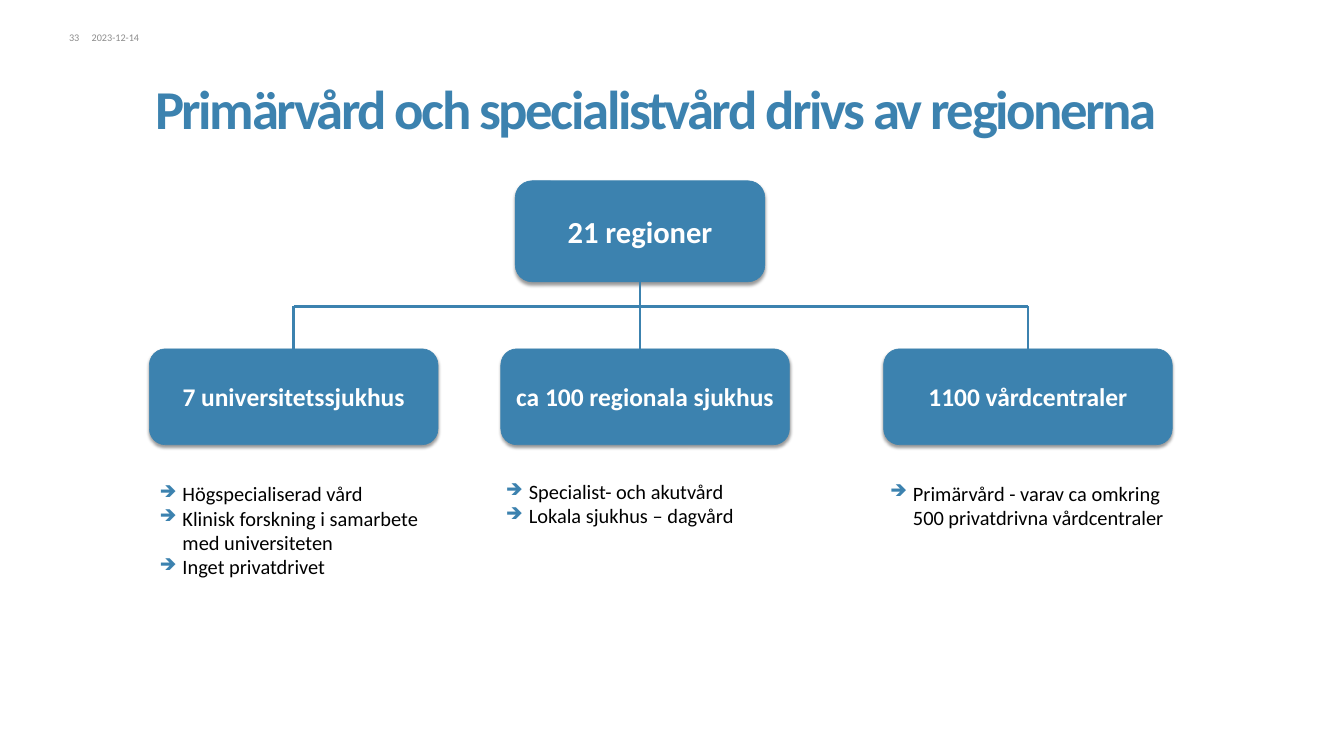
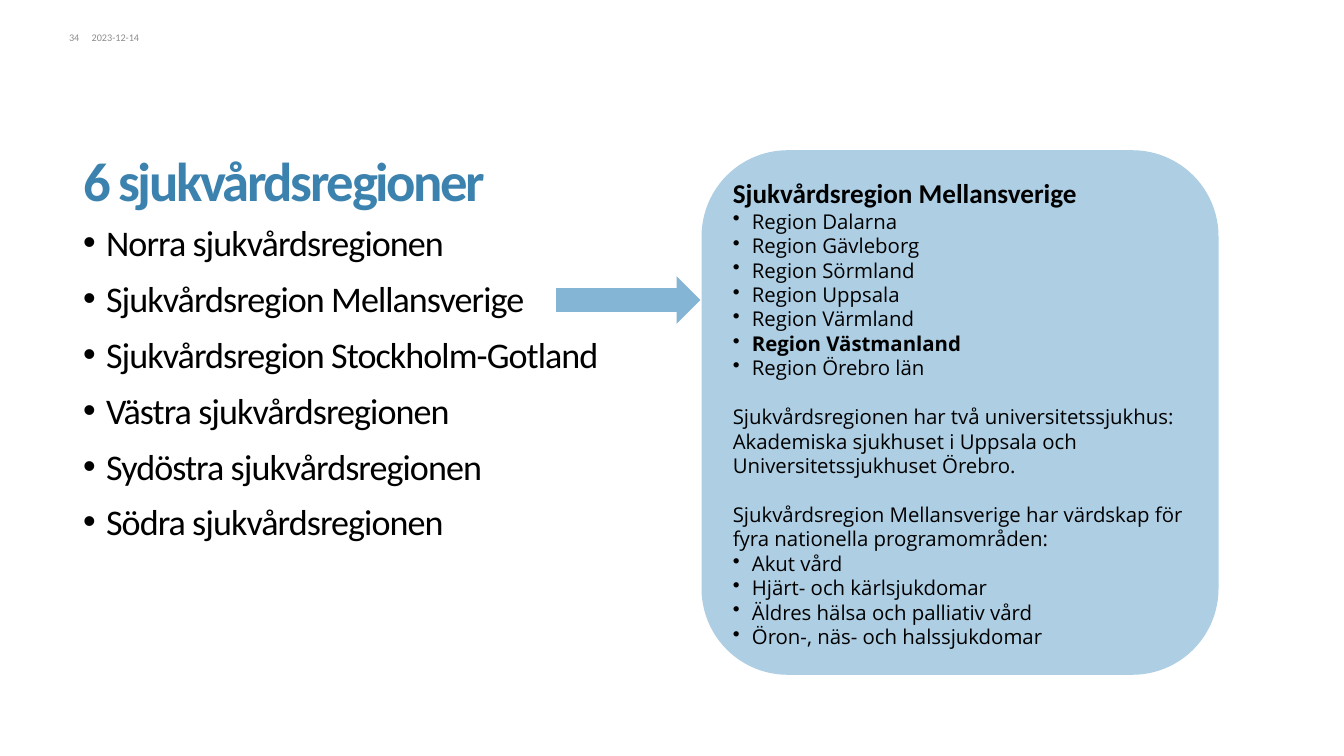
from dataclasses import dataclass
from typing import Any, Optional

import pptx
import pptx.dml.color
import pptx.enum.shapes
import pptx.enum.text
import pptx.oxml
import pptx.oxml.ns
import pptx.util

Pt = pptx.util.Pt
RGBColor = pptx.dml.color.RGBColor
Align = pptx.enum.text.PP_ALIGN
Anchor = pptx.enum.text.MSO_ANCHOR
Preset = pptx.enum.shapes.MSO_SHAPE

BLUE = RGBColor(0x3C, 0x82, 0xAF)
MID_BLUE = RGBColor(0x84, 0xB5, 0xD5)
PALE_BLUE = RGBColor(0xAD, 0xCE, 0xE3)
GREY = RGBColor(0x8C, 0x8C, 0x8C)
BLACK = RGBColor(0, 0, 0)
WHITE = RGBColor(0xFF, 0xFF, 0xFF)

MAIN_FONT = "Calibri"
PANEL_FONT = "Open Sans"
DATE = "2023-12-14"
TITLE_ONLY, TITLE_AND_BODY = 5, 1
TOP, BOTTOM = 0, 2
PANEL_LINE = 28.8


@dataclass(frozen=True)
class Box:
    left: float
    top: float
    width: float
    height: float

    def lengths(self) -> tuple:
        return Pt(self.left), Pt(self.top), Pt(self.width), Pt(self.height)


@dataclass(frozen=True)
class TextStyle:
    size: float
    color: RGBColor = BLACK
    bold: bool = False
    font: str = MAIN_FONT
    align: Align = Align.LEFT
    bullet: str = ""
    indent: float = 0
    bullet_color: Optional[RGBColor] = None
    bullet_percent: int = 100
    tracking: float = 0
    line_spacing: Any = None
    space_before: float = 0
    space_after: float = 0


@dataclass(frozen=True)
class CareUnit:
    name: str
    left: float
    list_box: Box
    facts: tuple


TITLE = TextStyle(64.5, BLUE, True, tracking=-2.8, line_spacing=0.85)
CENTRED_TITLE = TextStyle(64.5, BLUE, True, align=Align.CENTER, tracking=-2.8, line_spacing=0.85)
DATE_STYLE = TextStyle(12, GREY)
NUMBER_STYLE = TextStyle(12, GREY, align=Align.RIGHT)
ROOT_STYLE = TextStyle(36, WHITE, True, align=Align.CENTER)
UNIT_STYLE = TextStyle(30, WHITE, True, align=Align.CENTER)
FACT = TextStyle(24, bullet="➔", indent=27, bullet_color=BLUE, bullet_percent=80)
REGION = TextStyle(42.5, bullet="•", indent=27, tracking=-1.1, line_spacing=0.84, space_after=23)
PANEL_HEADING = TextStyle(32, bold=True)
PANEL_TEXT = TextStyle(24, font=PANEL_FONT, line_spacing=Pt(PANEL_LINE))
PANEL_BLOCK = TextStyle(24, font=PANEL_FONT, line_spacing=Pt(PANEL_LINE), space_before=PANEL_LINE)
PANEL_ITEM = TextStyle(24, font=PANEL_FONT, bullet="•", indent=22.5, line_spacing=Pt(PANEL_LINE))
PANEL_BOLD_ITEM = TextStyle(24, bold=True, font=PANEL_FONT, bullet="•", indent=22.5,
                            line_spacing=Pt(PANEL_LINE))

ROOT_BOX = Box(607, 213, 294, 119)
UNIT_TOP, UNIT_WIDTH, UNIT_HEIGHT = 411, 340, 113
BRANCH_TOP = 361
CARE_UNITS = (
    CareUnit("7 universitetssjukhus", 176, Box(188, 567, 318, 122),
             ("Högspecialiserad vård", "Klinisk forskning i samarbete med universiteten",
              "Inget privatdrivet")),
    CareUnit("ca 100 regionala sjukhus", 590, Box(596, 564.5, 343, 58),
             ("Specialist- och akutvård", "Lokala sjukhus – dagvård")),
    CareUnit("1100 vårdcentraler", 1041, Box(1048.5, 566.5, 343, 58),
             ("Primärvård - varav ca omkring 500 privatdrivna vårdcentraler",)),
)
CARE_REGIONS = (
    "Norra sjukvårdsregionen", "Sjukvårdsregion Mellansverige",
    "Sjukvårdsregion Stockholm-Gotland", "Västra sjukvårdsregionen",
    "Sydöstra sjukvårdsregionen", "Södra sjukvårdsregionen",
)
PANEL_LINES = (
    ("Sjukvårdsregion Mellansverige", PANEL_HEADING),
    ("Region Dalarna", PANEL_ITEM),
    ("Region Gävleborg", PANEL_ITEM),
    ("Region Sörmland", PANEL_ITEM),
    ("Region Uppsala", PANEL_ITEM),
    ("Region Värmland", PANEL_ITEM),
    ("Region Västmanland", PANEL_BOLD_ITEM),
    ("Region Örebro län", PANEL_ITEM),
    ("Sjukvårdsregionen har två universitetssjukhus:", PANEL_BLOCK),
    ("Akademiska sjukhuset i Uppsala och Universitetssjukhuset Örebro.", PANEL_TEXT),
    ("Sjukvårdsregion Mellansverige har värdskap för fyra nationella programområden:",
     PANEL_BLOCK),
    ("Akut vård", PANEL_ITEM),
    ("Hjärt- och kärlsjukdomar", PANEL_ITEM),
    ("Äldres hälsa och palliativ vård", PANEL_ITEM),
    ("Öron-, näs- och halssjukdomar", PANEL_ITEM),
)


def add_xml(parent: Any, tag: str, **attributes: Any) -> Any:
    element = pptx.oxml.parse_xml(f"<a:{tag} {pptx.oxml.ns.nsdecls('a')}/>")
    for name, value in attributes.items():
        element.set(name, str(value))
    parent.append(element)
    return element


def add_bullet(paragraph: Any, style: TextStyle) -> None:
    properties = paragraph._p.get_or_add_pPr()
    indent = Pt(style.indent)
    properties.set("marL", str(indent))
    properties.set("indent", str(-indent))
    if style.bullet_color is not None:
        add_xml(add_xml(properties, "buClr"), "srgbClr", val=style.bullet_color)
    add_xml(properties, "buSzPct", val=style.bullet_percent * 1000)
    add_xml(properties, "buChar", char=style.bullet)


def write_paragraph(paragraph: Any, text: str, style: TextStyle) -> None:
    if style.bullet:
        add_bullet(paragraph, style)
    run = paragraph.add_run()
    run.text = text
    if style.tracking:
        run._r.get_or_add_rPr().set("spc", str(round(style.tracking * 100)))
    paragraph.alignment = style.align
    paragraph.line_spacing = style.line_spacing
    paragraph.space_before = Pt(style.space_before)
    paragraph.space_after = Pt(style.space_after)
    font = paragraph.font
    font.name, font.size, font.bold = style.font, Pt(style.size), style.bold
    font.color.rgb = style.color


def write_lines(frame: Any, lines: Any) -> None:
    """Fill a frame with (text, style) pairs, one paragraph each."""
    frame.word_wrap = True
    frame.auto_size = pptx.enum.text.MSO_AUTO_SIZE.NONE
    for index, (text, style) in enumerate(lines):
        paragraph = frame.add_paragraph() if index else frame.paragraphs[0]
        write_paragraph(paragraph, text, style)


def set_margins(frame: Any, bottom: float = 0) -> None:
    frame.margin_left = frame.margin_top = frame.margin_right = Pt(0)
    frame.margin_bottom = Pt(bottom)


def place(shape: Any, box: Box) -> None:
    shape.left, shape.top, shape.width, shape.height = box.lengths()


def add_text(slide: Any, box: Box, lines: Any) -> None:
    frame = slide.shapes.add_textbox(*box.lengths()).text_frame
    set_margins(frame)
    write_lines(frame, lines)


def add_filled_shape(slide: Any, preset: Preset, box: Box, color: RGBColor) -> Any:
    shape = slide.shapes.add_shape(preset, *box.lengths())
    shape.shadow.inherit = False
    shape.fill.solid()
    shape.fill.fore_color.rgb = color
    shape.line.fill.background()
    shape.text_frame.vertical_anchor = Anchor.MIDDLE
    return shape


def add_unit_box(slide: Any, box: Box, text: str, style: TextStyle) -> Any:
    """Add a rounded box with white text and a soft shadow below it."""
    shape = add_filled_shape(slide, Preset.ROUNDED_RECTANGLE, box, BLUE)
    shape.line.color.rgb = BLUE
    shape.line.width = Pt(0.75)
    effects = shape._element.spPr.find(pptx.oxml.ns.qn("a:effectLst"))
    shadow = add_xml(effects, "outerShdw", blurRad=Pt(4), dist=Pt(3), dir=90 * 60000,
                     rotWithShape=0)
    add_xml(add_xml(shadow, "srgbClr", val=BLACK), "alpha", val=40000)
    write_lines(shape.text_frame, [(text, style)])
    return shape


def add_line(slide: Any, start: tuple, end: tuple) -> Any:
    connector = slide.shapes.add_connector(
        pptx.enum.shapes.MSO_CONNECTOR.STRAIGHT, *map(Pt, start + end))
    connector.line.color.rgb = BLUE
    connector.line.width = Pt(3)
    add_xml(connector._element.spPr, "effectLst")
    return connector


def add_slide(presentation: Any, layout: int, number: int, title: str, title_box: Box,
              style: TextStyle) -> Any:
    """Add a slide with its title, page number and date."""
    slide = presentation.slides.add_slide(presentation.slide_layouts[layout])
    place(slide.shapes.title, title_box)
    frame = slide.shapes.title.text_frame
    frame.vertical_anchor = Anchor.BOTTOM
    set_margins(frame, bottom=6)
    write_lines(frame, [(title, style)])
    add_text(slide, Box(65.5, 37.5, 28, 14.5), [(str(number), NUMBER_STYLE)])
    add_text(slide, Box(108, 37.5, 63, 14.5), [(DATE, DATE_STYLE)])
    return slide


def build_care_slide(presentation: Any) -> None:
    slide = add_slide(presentation, TITLE_ONLY, 33,
                      "Primärvård och specialistvård drivs av regionerna",
                      Box(79, 78.5, 1387.5, 93.5), CENTRED_TITLE)
    root = add_unit_box(slide, ROOT_BOX, "21 regioner", ROOT_STYLE)
    unit_shapes = []
    for unit in CARE_UNITS:
        box = Box(unit.left, UNIT_TOP, UNIT_WIDTH, UNIT_HEIGHT)
        unit_shapes.append(add_unit_box(slide, box, unit.name, UNIT_STYLE))
        add_text(slide, unit.list_box, [(fact, FACT) for fact in unit.facts])

    trunk_x = ROOT_BOX.left + ROOT_BOX.width / 2
    trunk = add_line(slide, (trunk_x, ROOT_BOX.top + ROOT_BOX.height), (trunk_x, UNIT_TOP))
    trunk.begin_connect(root, BOTTOM)
    outer = (0, -1)
    branch_xs = [CARE_UNITS[index].left + UNIT_WIDTH / 2 for index in outer]
    for index, x in zip(outer, branch_xs):
        drop = add_line(slide, (x, BRANCH_TOP), (x, UNIT_TOP))
        drop.end_connect(unit_shapes[index], TOP)
    add_line(slide, (branch_xs[0], BRANCH_TOP), (branch_xs[1], BRANCH_TOP))


def build_regions_slide(presentation: Any) -> None:
    slide = add_slide(presentation, TITLE_AND_BODY, 34, "6 sjukvårdsregioner",
                      Box(98, 96.5, 1387.5, 160.5), TITLE)
    body = slide.placeholders[1]
    place(body, Box(98, 268, 1387.5, 471))
    set_margins(body.text_frame)
    write_lines(body.text_frame, [(region, REGION) for region in CARE_REGIONS])
    add_filled_shape(slide, Preset.RIGHT_ARROW, Box(655, 325.5, 170, 56), MID_BLUE)
    panel = add_filled_shape(slide, Preset.ROUNDED_RECTANGLE,
                             Box(826.5, 177, 609, 618), PALE_BLUE)
    write_lines(panel.text_frame, PANEL_LINES)


def main() -> None:
    presentation = pptx.Presentation()
    presentation.slide_width, presentation.slide_height = Pt(1583.28), Pt(890.64)
    build_care_slide(presentation)
    build_regions_slide(presentation)
    presentation.save("out.pptx")


if __name__ == "__main__":
    main()
